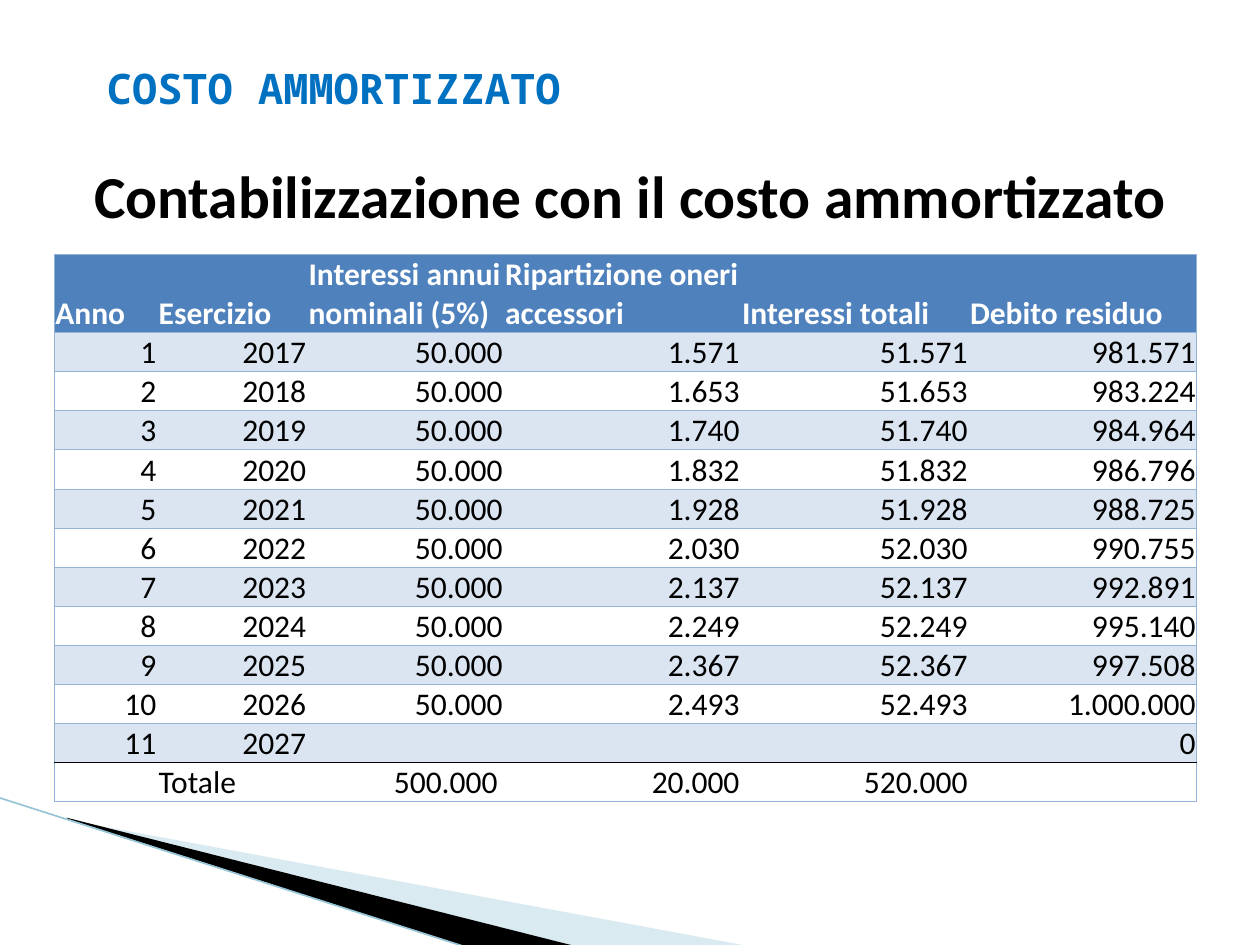
"""Build the amortised cost slide: title, heading, schedule table and corner decoration."""
from dataclasses import dataclass

from lxml import etree
from pptx import Presentation
from pptx.dml.color import RGBColor
from pptx.enum.shapes import MSO_CONNECTOR
from pptx.enum.text import MSO_ANCHOR, PP_ALIGN
from pptx.oxml.ns import qn
from pptx.util import Inches, Pt

LEFT, CENTER, RIGHT = PP_ALIGN.LEFT, PP_ALIGN.CENTER, PP_ALIGN.RIGHT
MIDDLE, BOTTOM = MSO_ANCHOR.MIDDLE, MSO_ANCHOR.BOTTOM
STRAIGHT = MSO_CONNECTOR.STRAIGHT

BLACK = RGBColor(0x00, 0x00, 0x00)
WHITE = RGBColor(0xFF, 0xFF, 0xFF)
TITLE_BLUE = RGBColor(0x00, 0x70, 0xC0)
HEADER_BLUE = RGBColor(0x4F, 0x81, 0xBD)
BAND_BLUE = RGBColor(0xDB, 0xE5, 0xF1)
BORDER_BLUE = RGBColor(0x95, 0xB3, 0xD7)
WEDGE_BLUE = RGBColor(0xA0, 0xCB, 0xDC)
LINE_BLUE = RGBColor(0x97, 0xC5, 0xD8)

COLUMN_WIDTHS = (0.82, 1.19, 1.56, 1.88, 1.81, 1.81)
HEADER_HEIGHT, ROW_HEIGHT = 0.62, 0.31
HEADERS = ("Anno", "Esercizio", "Interessi annui nominali (5%)",
           "Ripartizione oneri accessori", "Interessi totali", "Debito residuo")
FIRST_YEAR = 2017
NOMINAL_INTEREST = "50.000"
SCHEDULE = (
    ("1.571", "51.571", "981.571"),
    ("1.653", "51.653", "983.224"),
    ("1.740", "51.740", "984.964"),
    ("1.832", "51.832", "986.796"),
    ("1.928", "51.928", "988.725"),
    ("2.030", "52.030", "990.755"),
    ("2.137", "52.137", "992.891"),
    ("2.249", "52.249", "995.140"),
    ("2.367", "52.367", "997.508"),
    ("2.493", "52.493", "1.000.000"),
)
TOTALS = ("", "Totale", "500.000", "20.000", "520.000", "")


@dataclass(frozen=True)
class Heading:
    """A one-line text with its place and look."""
    text: str
    left: float
    top: float
    width: float
    height: float
    font: str
    size: int
    color: RGBColor
    align: PP_ALIGN


@dataclass(frozen=True)
class Wedge:
    """A filled corner outline with its opacity in percent."""
    points: tuple
    color: RGBColor
    opacity: int


HEADINGS = (
    Heading("Contabilizzazione con il costo ammortizzato", 0, 0.92, 10, 1.25,
            "Calibri", 34, BLACK, CENTER),
    Heading("COSTO AMMORTIZZATO", 0.75, 0.43, 6.93, 0.53,
            "Noto Sans Mono", 24, TITLE_BLUE, LEFT),
)
WEDGES = (
    Wedge(((0.55, 6.51), (5.95, 7.51), (4.56, 7.51), (0.55, 6.5)), WEDGE_BLUE, 40),
    Wedge(((0.53, 6.49), (4.57, 7.51), (3.72, 7.52), (0.54, 6.5)), BLACK, 100),
)


def style_span(span, font: str, size: int, color: RGBColor, bold: bool) -> None:
    """Format one run of text."""
    span.font.name = font
    span.font.size = Pt(size)
    span.font.bold = bold
    span.font.color.rgb = color


def draw_wedge(page, wedge: Wedge) -> None:
    """Draw one filled corner outline."""
    points = [(Inches(x), Inches(y)) for x, y in wedge.points]
    builder = page.shapes.build_freeform(*points[0], scale=1.0)
    builder.add_line_segments(points[1:], close=True)
    shape = builder.convert_to_shape()
    shape.shadow.inherit = False
    shape.line.fill.background()
    shape.fill.solid()
    shape.fill.fore_color.rgb = wedge.color
    if wedge.opacity < 100:
        color = shape.fill._xPr.find(f".//{qn('a:srgbClr')}")
        etree.SubElement(color, qn("a:alpha"), val=str(wedge.opacity * 1000))


def draw_corner_line(page) -> None:
    """Draw the thin line along the corner wedges."""
    line = page.shapes.add_connector(STRAIGHT, Inches(-0.01), Inches(6.33),
                                     Inches(3.71), Inches(7.52))
    line.line.color.rgb = LINE_BLUE
    line.line.width = Pt(0.95)
    etree.SubElement(line._element.spPr, qn("a:effectLst"))


def draw_heading(page, heading: Heading) -> None:
    """Draw one bold heading."""
    box = page.shapes.add_textbox(Inches(heading.left), Inches(heading.top),
                                  Inches(heading.width), Inches(heading.height))
    frame = box.text_frame
    frame.word_wrap = True
    frame.vertical_anchor = MIDDLE
    frame.text = heading.text
    para = frame.paragraphs[0]
    para.alignment = heading.align
    style_span(para.runs[0], heading.font, heading.size, heading.color, True)


def set_borders(cell, borders: dict) -> None:
    """Give each side of a cell a thin line, or none where the colour is None."""
    properties = cell._tc.get_or_add_tcPr()
    for side in ("L", "R", "T", "B"):
        line = etree.SubElement(properties, qn(f"a:ln{side}"), w=str(Pt(0.5)))
        color = borders.get(side)
        if color is None:
            etree.SubElement(line, qn("a:noFill"))
        else:
            fill = etree.SubElement(line, qn("a:solidFill"))
            etree.SubElement(fill, qn("a:srgbClr"), val=str(color))


def fill_cell(cell, text: str, align: PP_ALIGN, header: bool) -> None:
    """Write and format the text of one cell."""
    cell.margin_left = cell.margin_right = cell.margin_top = Inches(0.01)
    cell.margin_bottom = Inches(0)
    cell.vertical_anchor = BOTTOM
    cell.text_frame.text = text
    para = cell.text_frame.paragraphs[0]
    para.alignment = align
    for span in para.runs:
        style_span(span, "Calibri", 18, WHITE if header else BLACK, header)


def draw_schedule(page) -> None:
    """Draw the amortisation table."""
    rows = [HEADERS]
    for number, amounts in enumerate(SCHEDULE, 1):
        rows.append((str(number), str(FIRST_YEAR + number - 1), NOMINAL_INTEREST, *amounts))
    rows += [("11", "2027", "", "", "", "0"), TOTALS]
    total_row, last_column = len(rows) - 1, len(HEADERS) - 1

    height = HEADER_HEIGHT + ROW_HEIGHT * total_row
    table = page.shapes.add_table(len(rows), len(HEADERS), Inches(0.43), Inches(2.02),
                                  Inches(sum(COLUMN_WIDTHS)), Inches(height)).table
    table.first_row = table.horz_banding = False
    for column, width in zip(table.columns, COLUMN_WIDTHS):
        column.width = Inches(width)

    for r, texts in enumerate(rows):
        header = r == 0
        table.rows[r].height = Inches(HEADER_HEIGHT if header else ROW_HEIGHT)
        for c, text in enumerate(texts):
            cell = table.cell(r, c)
            align = LEFT if header or text == "Totale" else RIGHT
            fill_cell(cell, text, align, header)
            set_borders(cell, {
                "L": BORDER_BLUE if c == 0 else None,
                "R": BORDER_BLUE if c == last_column else None,
                "T": BLACK if r == total_row else BORDER_BLUE,
                "B": BLACK if r == total_row - 1 else BORDER_BLUE,
            })
            if header or r % 2:
                cell.fill.solid()
                cell.fill.fore_color.rgb = HEADER_BLUE if header else BAND_BLUE
            else:
                cell.fill.background()
    table.cell(total_row, 2).margin_right = Inches(0.05)


def main() -> None:
    """Build and save the deck."""
    deck = Presentation()
    deck.slide_width, deck.slide_height = Inches(10), Inches(7.5)
    page = deck.slides.add_slide(deck.slide_layouts[6])
    for wedge in WEDGES:
        draw_wedge(page, wedge)
    draw_corner_line(page)
    for heading in HEADINGS:
        draw_heading(page, heading)
    draw_schedule(page)
    deck.save("out.pptx")


if __name__ == "__main__":
    main()
